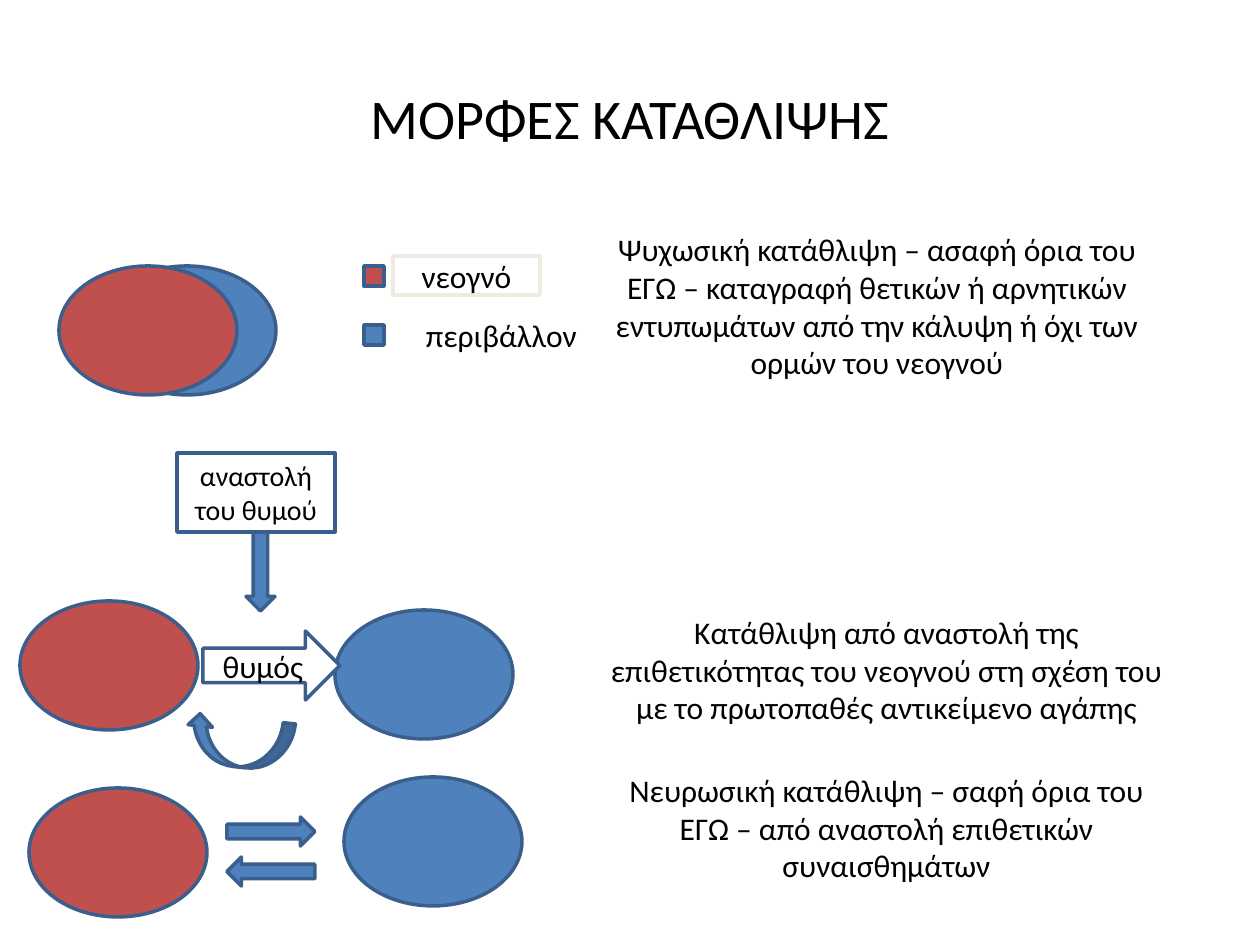
from pptx import Presentation
from pptx.dml.color import RGBColor
from pptx.enum.shapes import MSO_SHAPE
from pptx.enum.text import MSO_ANCHOR, PP_ALIGN
from pptx.util import Emu, Pt

RED, BLUE, EDGE = "C0504D", "4F81BD", "3A5F8C"
WHITE, CREAM, BLACK = "FFFFFF", "EEECE1", "000000"
EMU_PER_PX = 914400 / 126


def px(n):
    return Emu(round(n * EMU_PER_PX))


def color(value):
    return RGBColor.from_string(value)


class SlideBuilder:
    font = "Calibri"
    line_width = Pt(2)

    def __init__(self, slide):
        self.slide = slide

    def set_text(self, sp, text, size):
        tf = sp.text_frame
        tf.word_wrap = True
        tf.vertical_anchor = MSO_ANCHOR.MIDDLE
        p = tf.paragraphs[0]
        p.text = text
        p.alignment = PP_ALIGN.CENTER
        p.font.name = self.font
        p.font.size = Pt(size)
        p.font.color.rgb = color(BLACK)

    def title(self, text, x, y, w, h):
        sp = self.slide.shapes.title
        sp.left, sp.top, sp.width, sp.height = map(px, (x, y, w, h))
        self.set_text(sp, text, 32)

    def shape(self, kind, x, y, w, h, fill, line=EDGE):
        sp = self.slide.shapes.add_shape(kind, px(x), px(y), px(w), px(h))
        sp.shadow.inherit = False
        sp.fill.solid()
        sp.fill.fore_color.rgb = color(fill)
        sp.line.color.rgb = color(line)
        sp.line.width = self.line_width
        return sp

    def ellipse(self, x, y, fill):
        return self.shape(MSO_SHAPE.OVAL, x, y, 178, 129, fill)

    def box(self, text, x, y, w, h, line=WHITE, size=18, kind=MSO_SHAPE.RECTANGLE):
        sp = self.shape(kind, x, y, w, h, WHITE, line)
        self.set_text(sp, text, size)
        return sp

    def legend(self, text, y, w, fill, line):
        self.shape(MSO_SHAPE.RECTANGLE, 364, y, 20, 20, fill)
        self.box(text, 393, y - 10, w, 39, line)


def main():
    prs = Presentation()
    prs.slide_width, prs.slide_height = px(1260), px(945)
    s = SlideBuilder(prs.slides.add_slide(prs.slide_layouts[5]))
    s.title("ΜΟΡΦΕΣ ΚΑΤΑΘΛΙΨΗΣ", 63, 38, 1134, 158)

    # Newborn (red) and environment (blue); the last pair overlaps
    for x, y, fill in [(20, 601, RED), (335, 610, BLUE),
                       (29, 788, RED), (344, 777, BLUE),
                       (98, 266, BLUE), (59, 266, RED)]:
        s.ellipse(x, y, fill)

    # Anger arrow and its return
    s.box("θυμός", 203, 631, 137, 69, EDGE, kind=MSO_SHAPE.RIGHT_ARROW)
    back = s.shape(MSO_SHAPE.CURVED_DOWN_ARROW, 185, 718, 108, 49, BLUE)
    back.rotation = 186.2

    # Legend
    s.legend("νεογνό", 266, 147, RED, CREAM)
    s.legend("περιβάλλον", 325, 217, BLUE, WHITE)

    # Descriptions
    s.box("Ψυχωσική κατάθλιψη – ασαφή όρια του ΕΓΩ – καταγραφή θετικών ή "
          "αρνητικών εντυπωμάτων από την κάλυψη ή όχι των ορμών του νεογνού",
          601, 207, 552, 197)
    s.box("Κατάθλιψη από αναστολή της επιθετικότητας του νεογνού στη σχέση "
          "του με το πρωτοπαθές αντικείμενο αγάπης", 591, 601, 591, 137)
    s.box("Νευρωσική κατάθλιψη – σαφή όρια του ΕΓΩ – από αναστολή "
          "επιθετικών συναισθημάτων", 591, 759, 591, 137)

    # Inhibition of anger
    s.shape(MSO_SHAPE.DOWN_ARROW, 246, 532, 29, 79, BLUE)
    s.box("αναστολή του θυμού", 177, 453, 158, 79, EDGE, size=16)

    # Exchange between newborn and environment
    s.shape(MSO_SHAPE.RIGHT_ARROW, 227, 817, 88, 29, BLUE)
    s.shape(MSO_SHAPE.LEFT_ARROW, 227, 857, 88, 29, BLUE)

    prs.save("out.pptx")


if __name__ == "__main__":
    main()
